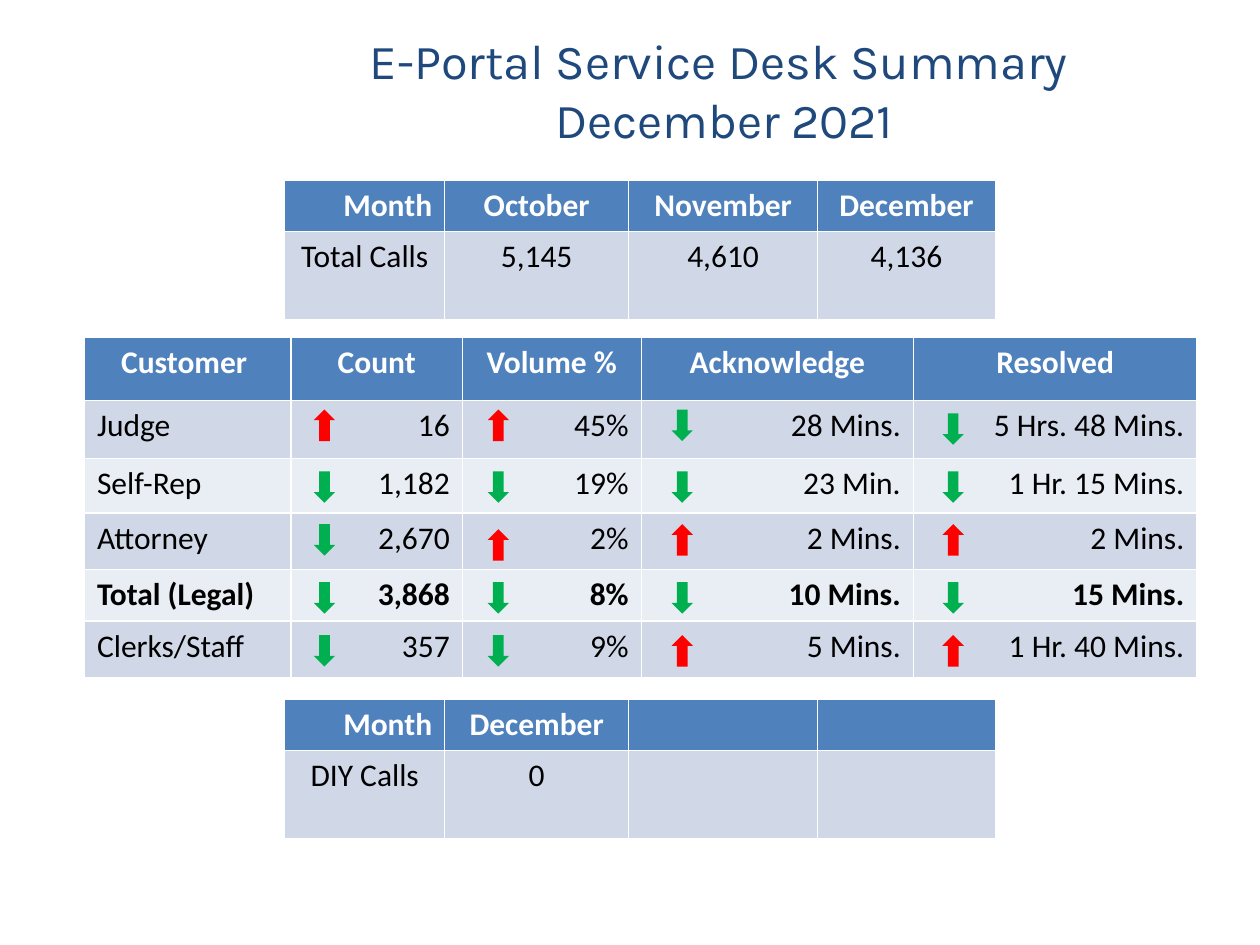
from typing import NamedTuple

from pptx import Presentation
from pptx.dml.color import RGBColor
from pptx.enum.shapes import MSO_SHAPE as Shape
from pptx.enum.text import MSO_ANCHOR as Anchor, PP_ALIGN as Align
from pptx.util import Inches, Pt

NAVY = RGBColor(0x1F, 0x49, 0x7D)
BLUE = RGBColor(0x4F, 0x81, 0xBD)
BANDS = (RGBColor(0xD0, 0xD8, 0xE8), RGBColor(0xE9, 0xED, 0xF4))
WHITE = RGBColor(0xFF, 0xFF, 0xFF)
BLACK = RGBColor(0, 0, 0)
RED = RGBColor(0xFF, 0, 0)
GREEN = RGBColor(0, 0xB0, 0x50)


class Grid(NamedTuple):
    left: float
    top: float
    cols: list[float]
    rows: list[float]
    cells: list[list[str]]
    head: list[Align]
    body: list[Align]
    bold: int = 0  # body row in bold, 0 for none


def draw_grid(slide, grid: Grid) -> None:
    table = slide.shapes.add_table(
        len(grid.rows), len(grid.cols), Inches(grid.left), Inches(grid.top),
        Inches(sum(grid.cols)), Inches(sum(grid.rows))).table
    for col, width in zip(table.columns, grid.cols):
        col.width = Inches(width)
    for row, height in zip(table.rows, grid.rows):
        row.height = Inches(height)
    for r, texts in enumerate(grid.cells):
        for c, text in enumerate(texts):
            cell = table.cell(r, c)
            cell.fill.solid()
            cell.fill.fore_color.rgb = BANDS[(r - 1) % 2] if r else BLUE
            para = cell.text_frame.paragraphs[0]
            para.text = text
            para.alignment = (grid.body if r else grid.head)[c]
            font = para.font
            font.name, font.size = "Calibri", Pt(18)
            font.bold = r in (0, grid.bold)
            font.color.rgb = BLACK if r else WHITE


def draw_arrow(slide, left: float, top: float, rise: bool) -> None:
    arrow = slide.shapes.add_shape(
        Shape.DOWN_ARROW, Inches(left), Inches(top), Inches(0.17), Inches(0.25))
    arrow.shadow.inherit = False
    arrow.rotation = 180 if rise else 0
    arrow.fill.solid()
    arrow.fill.fore_color.rgb = RED if rise else GREEN
    arrow.line.fill.background()


def month_grid(top: float, cells: list[list[str]]) -> Grid:
    return Grid(2.26, top, [1.27, 1.46, 1.5, 1.41], [0.4, 0.7], cells,
                [Align.RIGHT] + [Align.CENTER] * 3, [Align.CENTER] * 4)


CALLS = month_grid(1.43, [["Month", "October", "November", "December"],
                          ["Total Calls", "5,145", "4,610", "4,136"]])
DIY = month_grid(5.55, [["Month", "December", "", ""],
                        ["DIY Calls", "0", "", ""]])
DESK = Grid(
    0.67, 2.68, [1.64, 1.36, 1.42, 2.16, 2.25],
    [0.5, 0.46, 0.43, 0.45, 0.41, 0.45],
    [["Customer ", "Count", "Volume %", "Acknowledge", "Resolved"],
     ["Judge", "16", "45%", "28 Mins.", "5 Hrs. 48 Mins."],
     ["Self-Rep", "1,182", "19%", "23 Min.", "1 Hr. 15 Mins."],
     ["Attorney", "2,670", "2%", "2 Mins.", "2 Mins."],
     ["Total (Legal)", "3,868", "8%", "10 Mins.", "15 Mins."],
     ["Clerks/Staff", "357", "9%", "5 Mins.", "1 Hr. 40 Mins."]],
    [Align.CENTER] * 5, [Align.LEFT] + [Align.RIGHT] * 4, bold=4)

# Trend per customer row: U for up, D for down
TRENDS = ["UUDD", "DDDD", "DUUU", "DDDD", "DDUU"]
ARROW_X = [2.49, 3.87, 5.33, 7.48]
ARROW_Y = [3.25, 3.74, 4.16, 4.62, 5.04]
NUDGE = {(0, 3): 0.03, (2, 1): 0.04}


def main() -> None:
    prs = Presentation()
    prs.slide_width, prs.slide_height = Inches(10), Inches(7.5)
    slide = prs.slides.add_slide(prs.slide_layouts[5])

    # Title, raised by a deep bottom inset
    title = slide.shapes.title
    title.left, title.top = Inches(2), Inches(0.33)
    title.width, title.height = Inches(7.5), Inches(1.22)
    frame = title.text_frame
    frame.margin_left = frame.margin_right = frame.margin_top = Inches(0.02)
    frame.margin_bottom = Inches(0.48)
    frame.vertical_anchor = Anchor.MIDDLE
    para = frame.paragraphs[0]
    para.text = "E-Portal Service Desk Summary \vDecember 2021"
    para.alignment = Align.CENTER
    for run in para.runs:
        run.font.name, run.font.size = "Karla", Pt(27.9)
        run.font.color.rgb = NAVY

    # Tables
    for grid in (DESK, CALLS, DIY):
        draw_grid(slide, grid)

    # Trend arrows
    for r, trend in enumerate(TRENDS):
        for c, way in enumerate(trend):
            top = ARROW_Y[r] + NUDGE.get((r, c), 0)
            draw_arrow(slide, ARROW_X[c], top, way == "U")

    prs.save("out.pptx")


if __name__ == "__main__":
    main()
